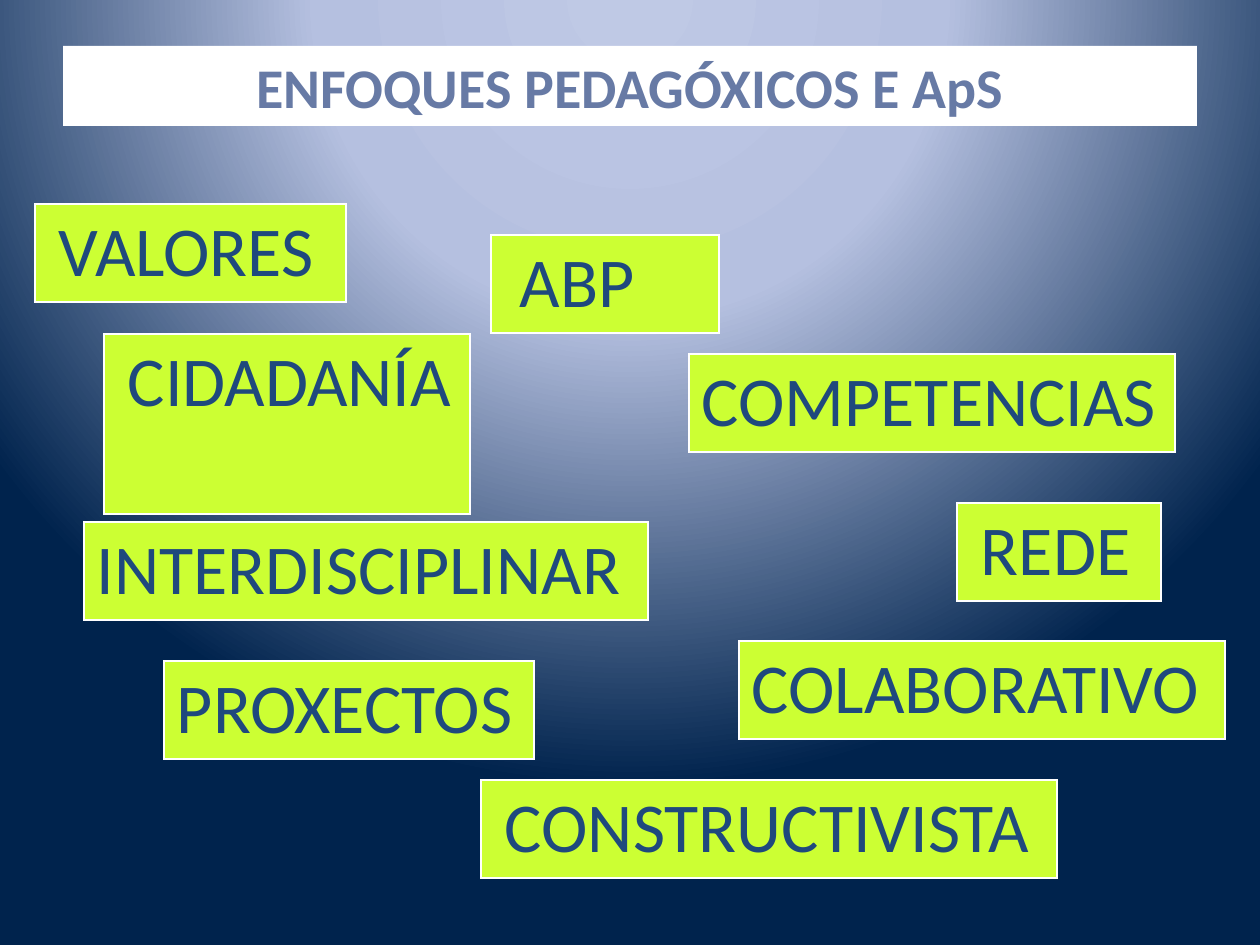
from dataclasses import dataclass
from pptx import Presentation
from pptx.dml.color import RGBColor as RGB
from pptx.enum.text import MSO_ANCHOR as Anchor, PP_ALIGN as Align
from pptx.oxml import parse_xml
from pptx.oxml.ns import nsdecls
from pptx.util import Emu, Pt


@dataclass(frozen=True)
class Theme:
    font: str = "Calibri"
    head: str = "677AA5"
    edge: str = "F2EEDD"
    ink: str = "1F497D"
    lime: str = "CCFF33"
    white: str = "FFFFFF"
    glow: tuple = ((0, "BFC9E5"), (40, "B5C0E0"), (100, "00234D"))
    big: int = 32
    label: int = 40


THEME = Theme()
WIDE, HIGH = 1260, 945
ROW, PAD = 97, 13

# Word, left, top, width, left margin, height
LABELS = (
    ("CONSTRUCTIVISTA", 481, 780, 576, 24, ROW),
    ("CIDADANÍA", 104, 334, 366, 24, 180),
    ("ABP", 491, 235, 228, 29, ROW),
    ("VALORES", 35, 204, 311, 24, ROW),
    ("COMPETENCIAS", 689, 354, 486, PAD, ROW),
    ("INTERDISCIPLINAR", 84, 522, 564, PAD, ROW),
    ("PROXECTOS", 164, 661, 370, PAD, ROW),
    ("REDE", 957, 503, 204, 24, ROW),
    ("COLABORATIVO", 739, 641, 486, PAD, ROW),
)


def px(n):
    return Emu(round(n * 914400 / 126))


def line(tag, color):
    """One-point solid line under the given tag."""
    return parse_xml(
        f'<a:{tag} {nsdecls("a")} w="{Pt(1)}"><a:solidFill>'
        f'<a:srgbClr val="{color}"/></a:solidFill></a:{tag}>')


def write(frame, text, size, color, bold=False, align=Align.LEFT, edge=None):
    para = frame.paragraphs[0]
    para.alignment = align
    para.space_before = Pt(0)
    run = para.add_run()
    run.text = text
    font = run.font
    font.name, font.size, font.bold = THEME.font, Pt(size), bold
    font.color.rgb = RGB.from_string(color)
    if edge:
        font._element.insert(0, line("ln", edge))


def paint(slide):
    """Radial glow from above the top edge."""
    stops = "".join(
        f'<a:gs pos="{at * 1000}"><a:srgbClr val="{color}"/></a:gs>'
        for at, color in THEME.glow)
    slide._element.cSld.insert(0, parse_xml(
        f'<p:bg {nsdecls("p", "a")}><p:bgPr><a:gradFill rotWithShape="1">'
        f'<a:gsLst>{stops}</a:gsLst><a:path path="circle">'
        '<a:fillToRect l="50000" t="-80000" r="50000" b="180000"/></a:path>'
        '</a:gradFill><a:effectLst/></p:bgPr></p:bg>'))


def title(slide, text):
    box = slide.shapes.title
    box.left, box.top, box.width, box.height = map(px, (63, 46, 1134, 80))
    box.fill.solid()
    box.fill.fore_color.rgb = RGB.from_string(THEME.white)
    frame = box.text_frame
    frame.word_wrap = True
    frame.vertical_anchor = Anchor.MIDDLE
    write(frame, text, THEME.big, THEME.head, bold=True,
          align=Align.CENTER, edge=THEME.edge)


def label(slide, text, left, top, width, inset, height):
    """One-cell table with a thin border."""
    spot = map(px, (left, top, width, height))
    table = slide.shapes.add_table(1, 1, *spot).table
    cell = table.cell(0, 0)
    cell.margin_left = px(inset)
    cell.fill.solid()
    cell.fill.fore_color.rgb = RGB.from_string(THEME.lime)
    props = cell._tc.get_or_add_tcPr()
    for i, side in enumerate("LRTB"):
        props.insert(i, line(f"ln{side}", THEME.white))
    write(cell.text_frame, text, THEME.label, THEME.ink)


def main():
    deck = Presentation()
    deck.slide_width, deck.slide_height = px(WIDE), px(HIGH)
    slide = deck.slides.add_slide(deck.slide_layouts[5])
    paint(slide)
    title(slide, "ENFOQUES PEDAGÓXICOS E ApS")
    for item in LABELS:
        label(slide, *item)
    deck.save("out.pptx")


if __name__ == "__main__":
    main()
